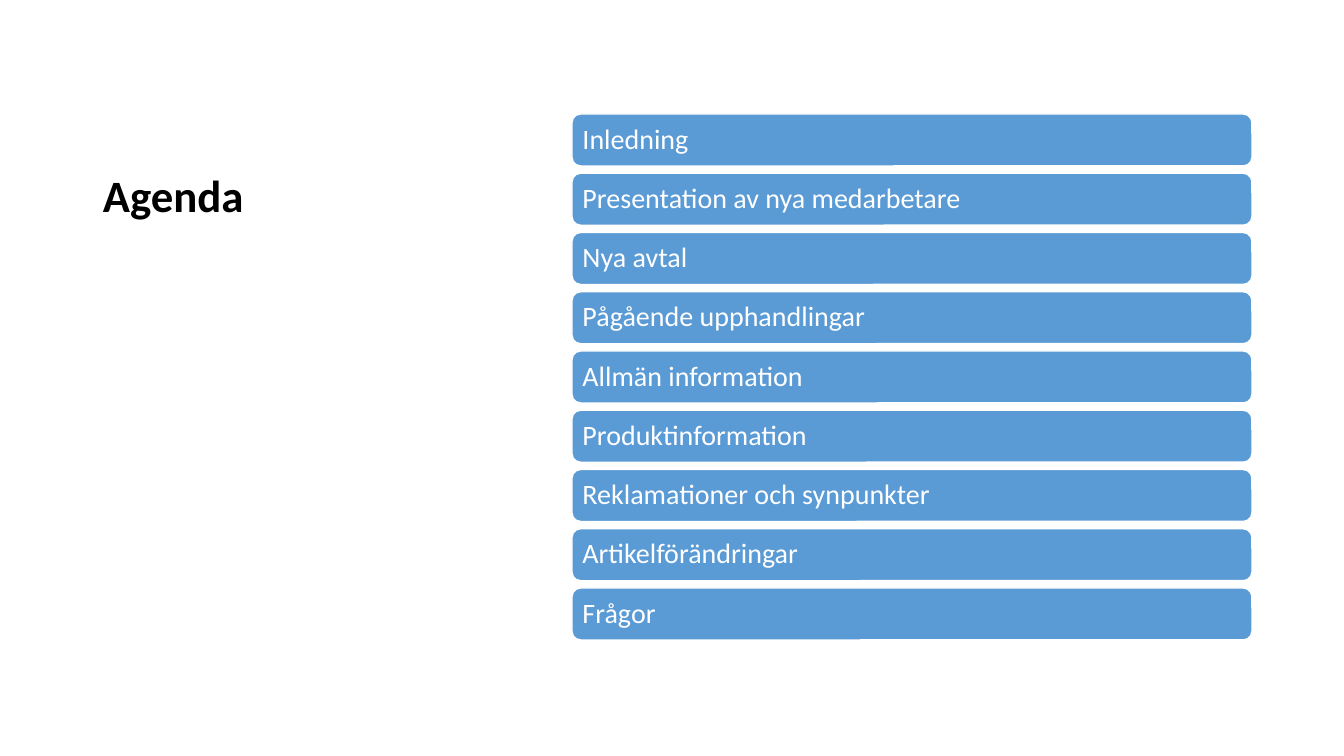
"""Build the agenda slide: a title on the left and a column of topic bars on the right."""
import pptx
import pptx.dml.color
import pptx.enum.shapes
import pptx.enum.text
import pptx.util

THEME = {
    "font": "Calibri",
    "title_color": "000000",
    "bar_color": "5B9BD5",
    "bar_text_color": "FFFFFF",
    "bar_line_color": "FFFFFF",
    "title_size": 32,
    "bar_size": 20,
}
EMU_PER_PX = 914400 / 100.8
TOPICS = [
    "Inledning",
    "Presentation av nya medarbetare",
    "Nya avtal",
    "Pågående upphandlingar",
    "Allmän information",
    "Produktinformation",
    "Reklamationer och synpunkter",
    "Artikelförändringar",
    "Frågor",
]


def px(n):
    """Turn pixels into EMU."""
    return pptx.util.Emu(round(n * EMU_PER_PX))


def write(sp, text, *, size, color, anchor, inset_x, inset_y, bold=False):
    """Write one formatted, left-aligned paragraph into a shape."""
    tf = sp.text_frame
    tf.word_wrap = True
    tf.vertical_anchor = anchor
    tf.margin_left = tf.margin_right = px(inset_x)
    tf.margin_top = tf.margin_bottom = px(inset_y)
    p = tf.paragraphs[0]
    p.alignment = pptx.enum.text.PP_ALIGN.LEFT
    p.line_spacing = 0.9
    r = p.add_run()
    r.text = text
    r.font.name = THEME["font"]
    r.font.size = pptx.util.Pt(size)
    r.font.bold = bold
    r.font.color.rgb = pptx.dml.color.RGBColor.from_string(color)


prs = pptx.Presentation()
prs.slide_width, prs.slide_height = px(1344), px(756)
s = prs.slides.add_slide(prs.slide_layouts[6])

title = s.shapes.add_textbox(px(93), px(50), px(433), px(177))
write(title, "Agenda", size=THEME["title_size"], color=THEME["title_color"], bold=True,
      anchor=pptx.enum.text.MSO_ANCHOR.BOTTOM, inset_x=10, inset_y=5)

first_top, last_top = 114, 588
pitch = (last_top - first_top) / (len(TOPICS) - 1)
for i, topic in enumerate(TOPICS):
    bar = s.shapes.add_shape(pptx.enum.shapes.MSO_SHAPE.ROUNDED_RECTANGLE,
                             px(572), px(first_top + i * pitch), px(680), px(52))
    bar.shadow.inherit = False
    bar.fill.solid()
    bar.fill.fore_color.rgb = pptx.dml.color.RGBColor.from_string(THEME["bar_color"])
    bar.line.color.rgb = pptx.dml.color.RGBColor.from_string(THEME["bar_line_color"])
    bar.line.width = pptx.util.Pt(1)
    write(bar, topic, size=THEME["bar_size"], color=THEME["bar_text_color"],
          anchor=pptx.enum.text.MSO_ANCHOR.MIDDLE, inset_x=8, inset_y=8)

prs.save("out.pptx")
